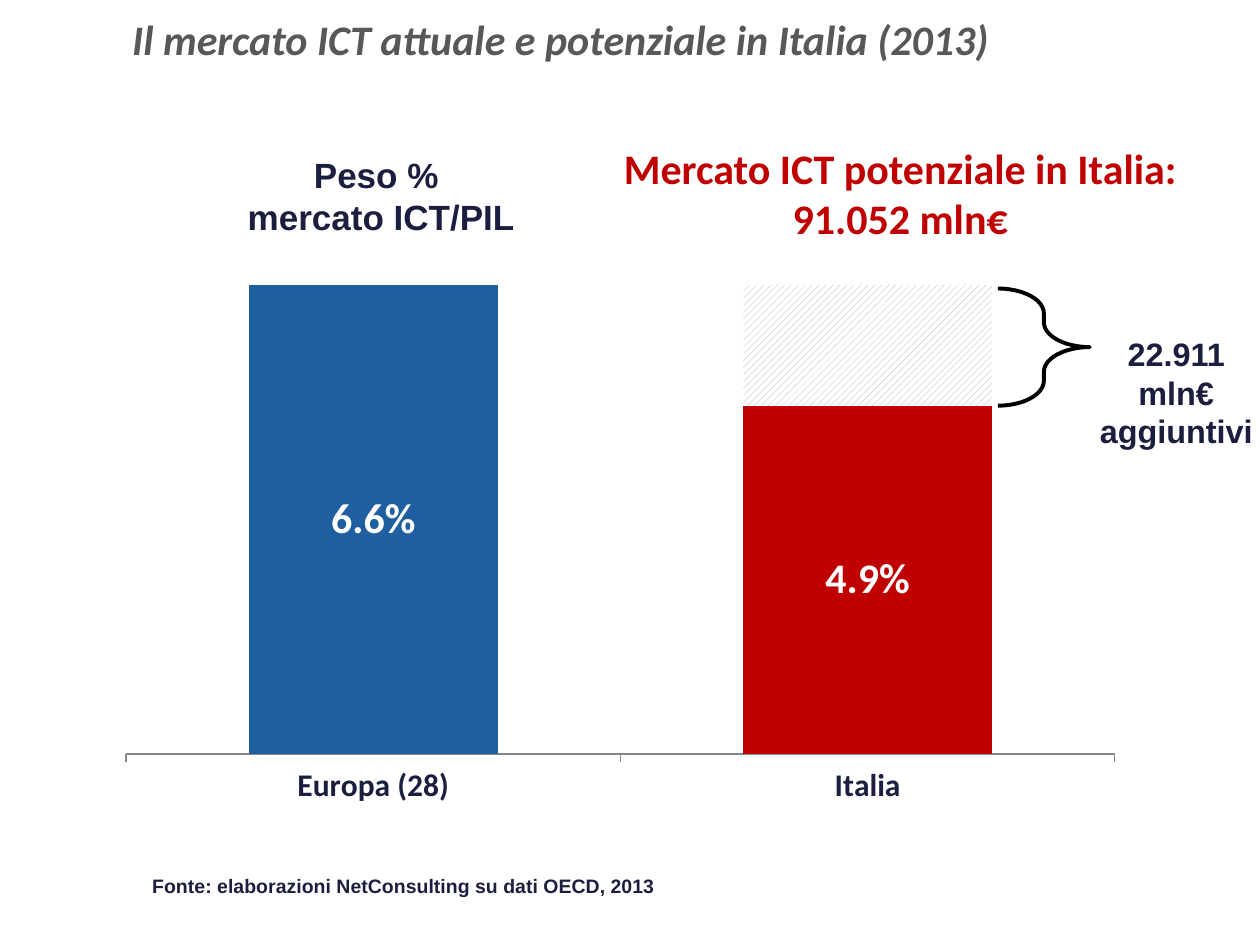
from dataclasses import dataclass

import lxml.etree
import pptx
import pptx.chart.data
import pptx.dml.color
import pptx.enum.chart
import pptx.enum.dml
import pptx.enum.shapes
import pptx.enum.text
import pptx.oxml
import pptx.oxml.ns
import pptx.util


@dataclass(frozen=True)
class Theme:
    """Colours, fonts and type sizes of the slide."""

    title: str = "585858"
    navy: str = "1B1E3E"
    blue: str = "1F5FA0"
    red: str = "C00000"
    white: str = "FFFFFF"
    black: str = "000000"
    hatch: str = "A6A6A6"
    axis: str = "868686"
    head_font: str = "Calibri"
    body_font: str = "Arial"
    large: float = 24
    medium: float = 20
    note: float = 18.5
    axis_size: float = 18
    small: float = 11.1


class SlideBuilder:
    """Draws elements on a slide divided into 100 columns and 75 rows."""

    def __init__(self, deck, theme):
        self.theme = theme
        self.slide = deck.slides.add_slide(deck.slide_layouts[6])
        self.column = deck.slide_width / 100
        self.row = deck.slide_height / 75

    def area(self, left, top, width, height):
        """Turns grid units into slide lengths."""
        return (round(left * self.column), round(top * self.row),
                round(width * self.column), round(height * self.row))

    def color(self, value):
        """Makes a colour from a hex value."""
        return pptx.dml.color.RGBColor.from_string(value)

    def style(self, font, name, size, color, italic=None):
        """Applies a bold typeface style to a font."""
        font.name, font.size, font.bold = name, pptx.util.Pt(size), True
        font.italic = italic
        font.color.rgb = self.color(color)

    def text(self, place, words, name, size, color, centred=True, italic=None):
        """Adds a wrapped text box."""
        frame = self.slide.shapes.add_textbox(*self.area(*place)).text_frame
        frame.word_wrap = True
        frame.text = words
        for paragraph in frame.paragraphs:
            if centred:
                paragraph.alignment = pptx.enum.text.PP_ALIGN.CENTER
            for run in paragraph.runs:
                self.style(run.font, name, size, color, italic)
        return frame

    def title(self, place, words):
        """Adds the slide heading."""
        frame = self.text(place, words, self.theme.head_font, self.theme.large,
                          self.theme.title, centred=False, italic=True)
        frame.vertical_anchor = pptx.enum.text.MSO_ANCHOR.MIDDLE
        frame.paragraphs[0].line_spacing = 0.9

    def brace(self, place, curl):
        """Adds a right brace."""
        brace = self.slide.shapes.add_shape(
            pptx.enum.shapes.MSO_SHAPE.RIGHT_BRACE, *self.area(*place))
        brace.shadow.inherit = False
        brace.fill.background()
        brace.line.color.rgb = self.color(self.theme.black)
        brace.line.width = pptx.util.Pt(2.25)
        brace.adjustments[0] = curl

    def stacked_columns(self, place, categories, series, maximum, plot_share):
        """Adds a stacked column chart with its plot at a fixed share."""
        theme = self.theme
        market = pptx.chart.data.CategoryChartData(number_format="0.0%")
        market.categories = categories
        for name, values in series:
            market.add_series(name, values)
        chart = self.slide.shapes.add_chart(
            pptx.enum.chart.XL_CHART_TYPE.COLUMN_STACKED,
            *self.area(*place), market).chart
        chart.has_legend = chart.has_title = False
        chart.font.name = theme.head_font
        chart.font.size = pptx.util.Pt(theme.axis_size)

        values_axis = chart.value_axis
        values_axis.minimum_scale, values_axis.maximum_scale = 0, maximum
        values_axis.has_major_gridlines = False
        values_axis.visible = False
        countries = chart.category_axis
        countries.major_tick_mark = pptx.enum.chart.XL_TICK_MARK.OUTSIDE
        countries.format.line.color.rgb = self.color(theme.axis)
        self.style(countries.tick_labels.font, theme.head_font,
                   theme.axis_size, theme.navy)

        columns = chart.plots[0]
        columns.gap_width, columns.overlap = 99, 100
        columns.vary_by_categories = False
        actual, potential = columns.series
        for index, value in enumerate((theme.blue, theme.red)):
            fill = actual.points[index].format.fill
            fill.solid()
            fill.fore_color.rgb = self.color(value)
        hatch = potential.points[1].format.fill
        hatch.patterned()
        hatch.pattern = pptx.enum.dml.MSO_PATTERN.WIDE_UPWARD_DIAGONAL
        hatch.fore_color.rgb = self.color(theme.hatch)
        hatch.back_color.rgb = self.color(theme.white)

        labels = actual.data_labels
        labels.show_value = True
        labels.number_format, labels.number_format_is_linked = "0.0%", False
        self.style(labels.font, theme.head_font, theme.large, theme.white)
        self.fix_plot(chart, plot_share)

    def fix_plot(self, chart, plot_share):
        """Sets the inner plot area as shares of the chart."""
        qn = pptx.oxml.ns.qn
        plot_area = chart.plots[0]._element.getparent()
        for automatic in plot_area.findall(qn("c:layout")):
            plot_area.remove(automatic)
        layout = pptx.oxml.parse_xml(
            f"<c:layout {pptx.oxml.ns.nsdecls('c')}><c:manualLayout/></c:layout>")
        settings = [("layoutTarget", "inner"), ("xMode", "edge"),
                    ("yMode", "edge"), *zip("xywh", plot_share)]
        for tag, value in settings:
            lxml.etree.SubElement(layout[0], qn(f"c:{tag}")).set("val", str(value))
        plot_area.insert(0, layout)


def main():
    """Builds and saves the slide."""
    theme = Theme()
    deck = pptx.Presentation()
    deck.slide_width = pptx.util.Inches(10)
    deck.slide_height = pptx.util.Inches(7.5)
    page = SlideBuilder(deck, theme)

    page.title((9.5, 1, 86.2, 4.6),
               "Il mercato ICT attuale e potenziale in Italia (2013)")
    page.stacked_columns(
        (9.2, 19, 80.9, 45.4), ("Europa (28)", "Italia"),
        (("Series 1", (0.066, 0.049)), ("Series 2", (None, 0.017))),
        maximum=0.07, plot_share=(0.01, 0.03, 0.97, 0.87))
    page.text((12.7, 11.7, 35.1, 7.7), "Peso % \nmercato ICT/PIL",
              theme.body_font, theme.medium, theme.navy)
    page.text((11.1, 68.9, 60.3, 2.9),
              "Fonte: elaborazioni NetConsulting su dati OECD, 2013",
              theme.body_font, theme.small, theme.navy, centred=False)
    page.brace((79.2, 22.9, 7.3, 9.3), curl=0.27)
    page.text((85.8, 26, 15.1, 10.3), "22.911 mln€ aggiuntivi",
              theme.body_font, theme.note, theme.navy)
    page.text((46.2, 10.8, 50.5, 9.1),
              "Mercato ICT potenziale in Italia:\v91.052 mln€",
              theme.head_font, theme.large, theme.red)
    deck.save("out.pptx")


if __name__ == "__main__":
    main()
